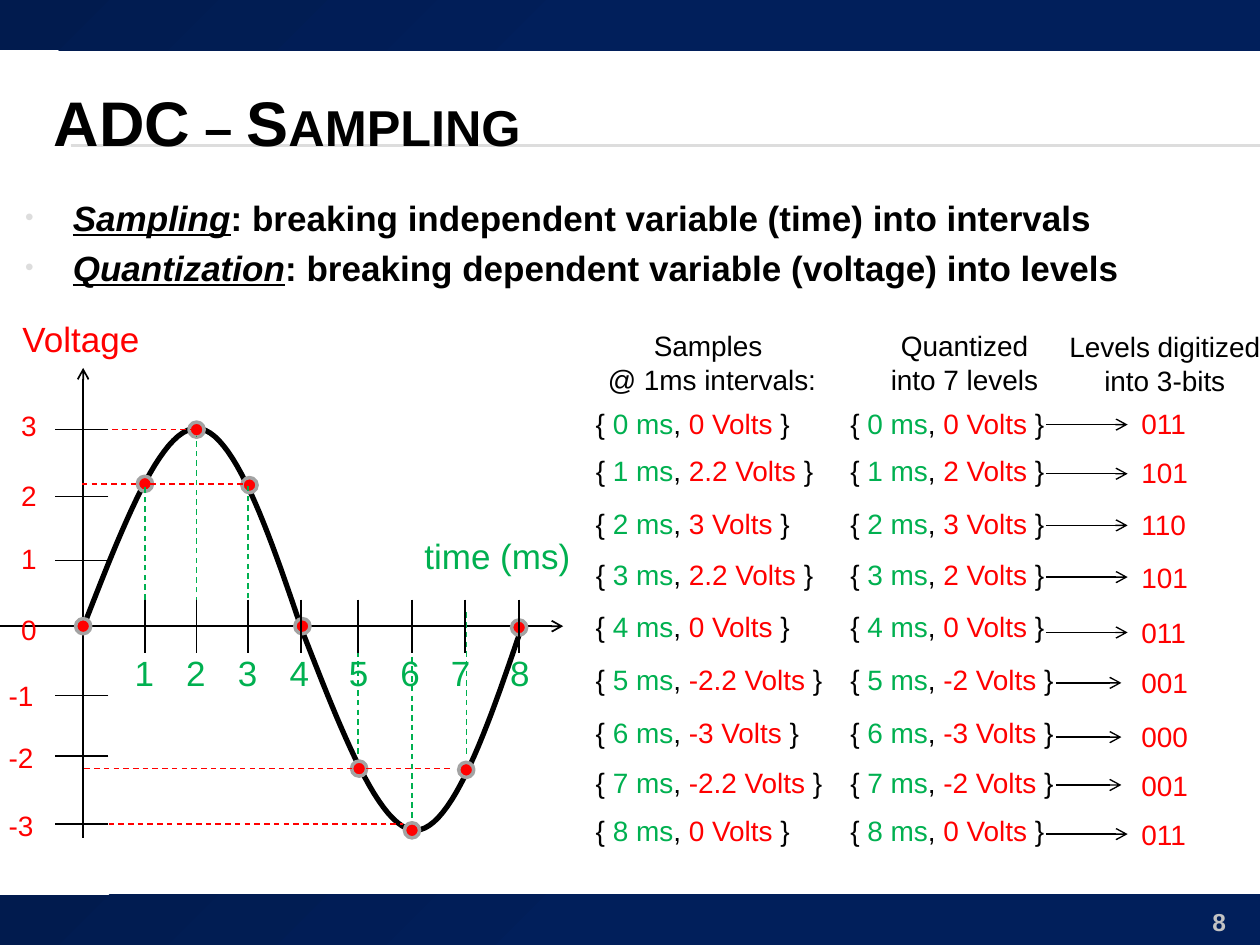
from dataclasses import dataclass

from lxml.etree import SubElement
from pptx import Presentation
from pptx.dml.color import RGBColor
from pptx.enum.dml import MSO_LINE
from pptx.enum.shapes import MSO_CONNECTOR, MSO_SHAPE
from pptx.enum.text import MSO_ANCHOR, MSO_AUTO_SIZE, PP_ALIGN
from pptx.oxml.ns import qn
from pptx.util import Inches, Pt

COLORS = {
    "black": "000000", "red": "FF0000", "green": "00B050", "rule": "DDDDDD",
    "ring": "A3A3A3", "number": "C3C3C3", "navy": "011F5B", "dark": "011B4E",
}
EMPHASIS = {"italic": True, "underline": True}
BOLD = {"bold": True}
THIN = 0.79


@dataclass(frozen=True)
class Run:
    text: str
    color: str = "black"
    size: float = 16
    style: tuple = ()


@dataclass(frozen=True)
class Sample:
    """One sampled instant: its table row and its place on the plot."""
    volts: str
    level: str
    bits: str
    top: float
    bits_top: float
    arrow_y: float
    dot: tuple
    label_x: float


@dataclass(frozen=True)
class Segment:
    x1: float
    y1: float
    x2: float
    y2: float
    color: str = "black"
    width: float = THIN
    dashed: bool = False
    arrow: bool = False


SAMPLES = [
    Sample("0", "0", "011", 3.18, 3.18, 3.37, (0.66, 4.97), 0),
    Sample("2.2", "2", "101", 3.55, 3.57, 3.76, (1.15, 3.84), 0.97),
    Sample("3", "3", "110", 3.97, 3.98, 4.17, (1.56, 3.41), 1.38),
    Sample("2.2", "2", "101", 4.38, 4.40, 4.58, (1.98, 3.85), 1.79),
    Sample("0", "0", "011", 4.79, 4.84, 5.02, (2.40, 4.97), 2.20),
    Sample("-2.2", "-2", "001", 5.21, 5.23, 5.42, (2.85, 6.10), 2.67),
    Sample("-3", "-3", "000", 5.63, 5.66, 5.85, (3.27, 6.59), 3.08),
    Sample("-2.2", "-2", "001", 6.03, 6.05, 6.23, (3.70, 6.11), 3.48),
    Sample("0", "0", "011", 6.41, 6.44, 6.62, (4.12, 4.98), 3.95),
]
PAIR_WIDTHS = {1: 1.77, 2: 1.84, 3: 1.95, 4: 2.03}  # by length of the voltage
VOLT_LABELS = {"3": 3.19, "2": 3.75, "1": 4.25, "0": 4.81,
               "-1": 5.34, "-2": 5.83, "-3": 6.37}
VOLT_TICKS = [3.41, 3.94, 4.45, 5.52, 6.0, 6.54]
TIME_TICKS = [1.15, 1.56, 1.97, 2.39, 2.84, 3.27, 3.69, 4.12]
CURVES = [
    [(0.66, 4.98), (0.97, 4.19), (1.27, 3.4), (1.56, 3.4),
     (1.85, 3.4), (2.13, 4.21), (2.4, 5.01)],
    [(2.4, 5.01), (2.71, 5.8), (3.01, 6.59), (3.3, 6.59),
     (3.59, 6.58), (3.87, 5.78), (4.14, 4.98)],
]
# Dashed guides: (x, start y, end y) and (y, start x, end x)
TIME_GUIDES = [(1.15, 4.99, 3.84), (1.56, 5.01, 3.46), (1.97, 4.98, 3.83),
               (2.84, 4.86, 6.0), (3.27, 4.98, 6.52), (3.7, 4.86, 6.0)]
VOLT_GUIDES = [(3.41, 0.66, 1.54), (3.84, 0.65, 1.96),
               (6.1, 0.67, 3.59), (6.54, 0.63, 3.2)]


def rgb(name: str) -> RGBColor:
    return RGBColor.from_string(COLORS[name])


def add_text(slide, box: tuple, lines: list, wrap: bool = False,
             align=PP_ALIGN.LEFT, anchor=MSO_ANCHOR.TOP):
    shape = slide.shapes.add_textbox(*map(Inches, box))
    frame = shape.text_frame
    settings = {
        "word_wrap": wrap, "vertical_anchor": anchor,
        "auto_size": MSO_AUTO_SIZE.NONE if wrap else MSO_AUTO_SIZE.SHAPE_TO_FIT_TEXT,
    }
    for name, value in settings.items():
        setattr(frame, name, value)
    for index, line in enumerate(lines):
        paragraph = frame.add_paragraph() if index else frame.paragraphs[0]
        paragraph.alignment = align
        for part in line:
            run = paragraph.add_run()
            run.text = part.text
            run.font.color.rgb = rgb(part.color)
            values = {"name": "Arial", "size": Pt(part.size), **dict(part.style)}
            for name, value in values.items():
                setattr(run.font, name, value)
    return frame


def add_line(slide, segment: Segment) -> None:
    ends = (segment.x1, segment.y1, segment.x2, segment.y2)
    connector = slide.shapes.add_connector(MSO_CONNECTOR.STRAIGHT, *map(Inches, ends))
    connector.line.color.rgb = rgb(segment.color)
    connector.line.width = Pt(segment.width)
    if segment.dashed:
        connector.line.dash_style = MSO_LINE.DASH
    properties = connector._element.spPr
    if segment.arrow:
        SubElement(properties.find(qn("a:ln")), qn("a:tailEnd"), type="arrow")
    SubElement(properties, qn("a:effectLst"))


def add_bar(slide, top: float) -> None:
    bar = slide.shapes.add_shape(
        MSO_SHAPE.RECTANGLE, 0, Inches(top), Inches(10), Inches(0.4))
    bar.shadow.inherit = False
    bar.line.fill.background()
    bar.fill.gradient()
    bar.fill.gradient_angle = 315
    for stop, color, position in zip(bar.fill.gradient_stops, ("dark", "navy"), (0, 0.5)):
        stop.color.rgb = rgb(color)
        stop.position = position


def add_dot(slide, x: float, y: float, size: float = 0.12) -> None:
    box = (x - size / 2, y - size / 2, size, size)
    dot = slide.shapes.add_shape(MSO_SHAPE.OVAL, *map(Inches, box))
    dot.shadow.inherit = False
    dot.fill.solid()
    dot.fill.fore_color.rgb = rgb("red")
    dot.line.color.rgb = rgb("ring")
    dot.line.width = Pt(2)


def bezier(points: list, t: float) -> tuple:
    weights = ((1 - t) ** 3, 3 * t * (1 - t) ** 2, 3 * t ** 2 * (1 - t), t ** 3)
    return tuple(Inches(sum(w * p[axis] for w, p in zip(weights, points)))
                 for axis in (0, 1))


def add_curve(slide, points: list, steps: int = 24) -> None:
    vertices = [bezier(points[start:start + 4], step / steps)
                for start in (0, 3) for step in range(steps + 1)]
    builder = slide.shapes.build_freeform(*vertices[0])
    builder.add_line_segments(vertices[1:], close=False)
    curve = builder.convert_to_shape()
    curve.shadow.inherit = False
    curve.fill.background()
    curve.line.color.rgb = rgb("black")
    curve.line.width = Pt(3)


def add_heading(slide) -> None:
    for y in (1.15, 1.16):
        add_line(slide, Segment(0.56, y, 10, y, "rule", 0.75))
    for top in (0, 7.1):
        add_bar(slide, top)
    bold = tuple(BOLD.items())
    title = add_text(slide, (0.33, 0.5, 9.5, 0.92),
                     [[Run("ADC – Sampling", size=36, style=bold)]],
                     wrap=True, anchor=MSO_ANCHOR.MIDDLE)
    title.paragraphs[0].runs[0]._r.get_or_add_rPr().set("cap", "small")

    # Bulleted definitions
    term = tuple({**BOLD, **EMPHASIS}.items())
    definitions = {"Sampling": ": breaking independent variable (time) into intervals",
                   "Quantization": ": breaking dependent variable (voltage) into levels"}
    body = add_text(slide, (0.1, 1.51, 10.55, 5.3),
                    [[Run(word, size=20, style=term), Run(rest, size=20, style=bold)]
                     for word, rest in definitions.items()], wrap=True)
    for paragraph in body.paragraphs:
        paragraph.space_before = Pt(4.6)
        properties = paragraph._p.get_or_add_pPr()
        properties.set("marL", str(Inches(0.38)))
        properties.set("indent", str(-Inches(0.38)))
        color = SubElement(properties, qn("a:buClr"))
        SubElement(color, qn("a:srgbClr"), val=COLORS["rule"])
        SubElement(properties, qn("a:buSzPct"), val="70000")
        SubElement(properties, qn("a:buFont"), typeface="Arial")
        SubElement(properties, qn("a:buChar"), char="•")
    add_text(slide, (9, 7.15, 0.83, 0.27), [[Run("8", "number", 14, bold)]],
             wrap=True, align=PP_ALIGN.RIGHT)


def add_plot(slide) -> None:
    # Axes and sine wave
    add_line(slide, Segment(-0.39, 4.97, 4.47, 4.97, width=1, arrow=True))
    add_line(slide, Segment(0.66, 6.65, 0.66, 2.92, width=1, arrow=True))
    add_text(slide, (3.27, 4.19, 1.37, 0.44), [[Run("time (ms)", "green", 20)]])
    add_text(slide, (0.08, 2.47, 1.14, 0.44), [[Run("Voltage", "red", 20)]])
    for points in CURVES:
        add_curve(slide, points)
    # Axis labels and sample dots
    for time, sample in enumerate(SAMPLES):
        if time:
            add_text(slide, (sample.label_x, 5.12, 0.36, 0.44),
                     [[Run(str(time), "green", 20)]])
        add_dot(slide, *sample.dot)
    for label, top in VOLT_LABELS.items():
        left, width = (-0.03, 0.4) if label.startswith("-") else (0.07, 0.33)
        add_text(slide, (left, top, width, 0.37), [[Run(label, "red")]])
    # Guides and ticks
    guides = [Segment(x, y1, x, y2, "green", dashed=True) for x, y1, y2 in TIME_GUIDES]
    guides += [Segment(x1, y, x2, y, "red", dashed=True) for y, x1, x2 in VOLT_GUIDES]
    ticks = [Segment(0.86, y, 0.44, y) for y in VOLT_TICKS]
    ticks += [Segment(x, 4.76, x, 5.18) for x in TIME_TICKS]
    for segment in guides + ticks:
        add_line(slide, segment)


def add_samples(slide) -> None:
    headers = [((4.65, 2.56, 1.94, 0.64), "Samples", " @ 1ms intervals:"),
               ((6.96, 2.56, 1.39, 0.64), "Quantized", "into 7 levels"),
               ((8.38, 2.57, 1.73, 0.64), "Levels digitized", "into 3-bits")]
    for box, *lines in headers:
        add_text(slide, box, [[Run(line)] for line in lines], align=PP_ALIGN.CENTER)
    for time, sample in enumerate(SAMPLES):
        for left, volts in ((4.63, sample.volts), (6.65, sample.level)):
            add_text(slide, (left, sample.top, PAIR_WIDTHS[len(volts)], 0.37),
                     [[Run("{ "), Run(f"{time} ms", "green"), Run(", "),
                       Run(f"{volts} Volts", "red"), Run(" }")]])
        add_text(slide, (8.96, sample.bits_top, 0.58, 0.37), [[Run(sample.bits, "red")]])
        start, end = (8.38, 8.9) if sample.level.startswith("-") else (8.3, 8.95)
        add_line(slide, Segment(start, sample.arrow_y, end, sample.arrow_y, arrow=True))


def main() -> None:
    presentation = Presentation()
    presentation.slide_width, presentation.slide_height = Inches(10), Inches(7.5)
    slide = presentation.slides.add_slide(presentation.slide_layouts[6])
    add_heading(slide)
    add_plot(slide)
    add_samples(slide)
    presentation.save("out.pptx")


if __name__ == "__main__":
    main()
